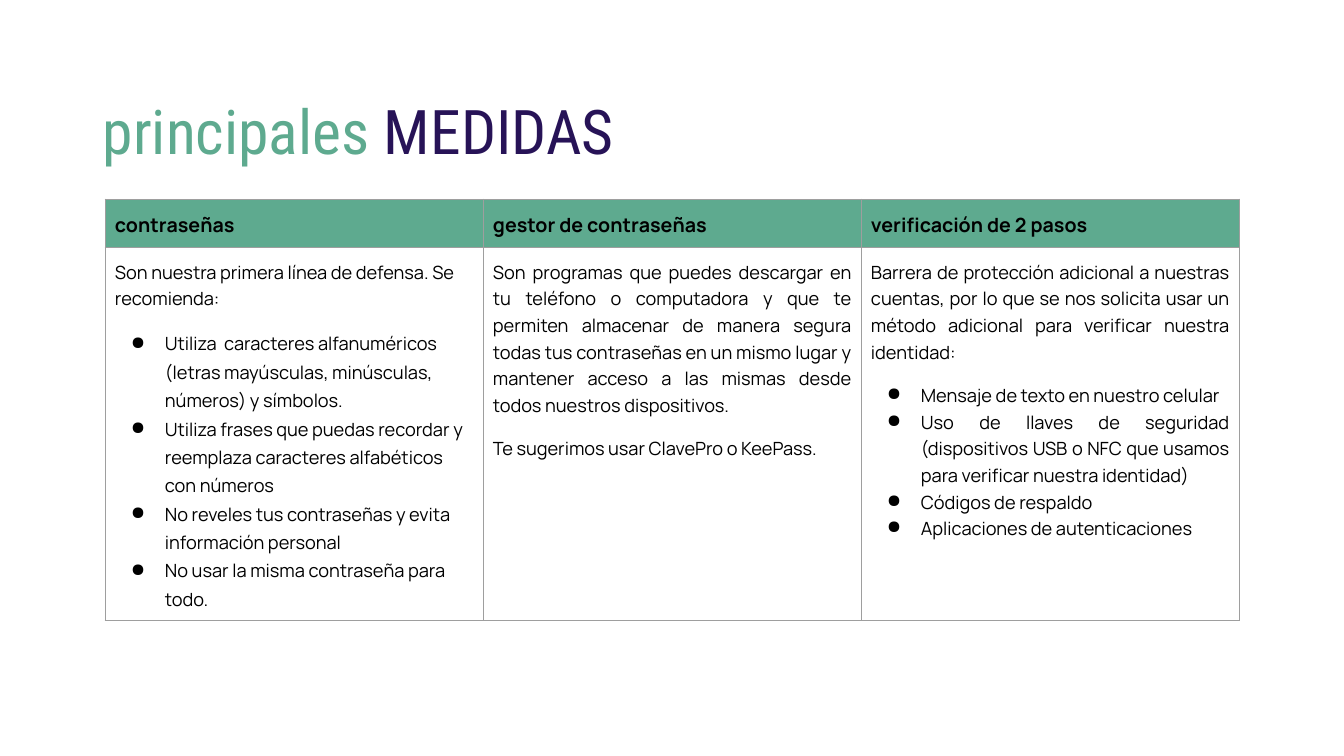
from lxml import etree
from pptx import Presentation
from pptx.dml.color import RGBColor
from pptx.enum.text import MSO_ANCHOR, PP_ALIGN
from pptx.oxml.ns import qn
from pptx.util import Emu, Pt

LEFT, JUSTIFY = PP_ALIGN.LEFT, PP_ALIGN.JUSTIFY
MIDDLE = MSO_ANCHOR.MIDDLE

GREEN, PURPLE, BLACK, GREY = "5EAA8F", "271357", "000000", "9E9E9E"
TITLE_FONT, TABLE_FONT = "Roboto Condensed", "Manrope"

TITLE = [("principales ", GREEN), ("MEDIDAS", PURPLE)]
MEASURES = [
    {
        "heading": "contraseñas",
        "align": LEFT,
        "bullet_spacing": 1.15,
        "texts": ["Son nuestra primera línea de defensa. Se recomienda:"],
        "bullets": [
            "Utiliza  caracteres alfanuméricos (letras mayúsculas, minúsculas, números) y símbolos.",
            "Utiliza frases que puedas recordar y reemplaza caracteres alfabéticos con números",
            "No reveles tus contraseñas y evita información personal",
            "No usar la misma contraseña para todo.",
        ],
    },
    {
        "heading": "gestor de contraseñas",
        "align": JUSTIFY,
        "bullet_spacing": 1.08,
        "texts": [
            "Son programas que puedes descargar en tu teléfono o computadora y que te "
            "permiten almacenar de manera segura todas tus contraseñas en un mismo lugar "
            "y mantener acceso a las mismas desde todos nuestros dispositivos.",
            "Te sugerimos usar ClavePro o KeePass.",
        ],
        "bullets": [],
    },
    {
        "heading": "verificación de 2 pasos",
        "align": JUSTIFY,
        "bullet_spacing": 1.08,
        "texts": [
            "Barrera de protección adicional a nuestras cuentas, por lo que se nos solicita "
            "usar un método adicional para verificar nuestra identidad:",
        ],
        "bullets": [
            "Mensaje de texto en nuestro celular",
            "Uso de llaves de seguridad (dispositivos USB o NFC que usamos para verificar "
            "nuestra identidad)",
            "Códigos de respaldo",
            "Aplicaciones de autenticaciones",
        ],
    },
]

SLIDE_SIZE = (1344, 756)
TITLE_BOX = (93, 62, 1159, 146)
TABLE_LEFT, TABLE_TOP, COLUMN_WIDTH = 105, 199, 378
ROW_HEIGHTS = (49, 373)
CELL_INSET, BULLET_INDENT, BULLET_HANG = 10, 50, 34


def px(length):
    return Emu(round(length * 914400 / 100.8))


def color(hex_string):
    return RGBColor.from_string(hex_string)


def add_run(paragraph, text, font, size, hex_string, bold=False):
    run = paragraph.add_run()
    run.text = text
    run.font.name = font
    run.font.size = Pt(size)
    run.font.bold = bold
    run.font.color.rgb = color(hex_string)


def add_bullet(paragraph):
    props = paragraph._p.get_or_add_pPr()
    props.set("marL", str(px(BULLET_INDENT)))
    props.set("indent", str(-px(BULLET_HANG)))
    bullet_color = etree.SubElement(props, qn("a:buClr"))
    etree.SubElement(bullet_color, qn("a:srgbClr"), val=BLACK)
    etree.SubElement(props, qn("a:buChar"), char="●")


def style_cell(cell, fill=None):
    """Set insets, fill and the four thin grey borders."""
    cell.margin_left = cell.margin_right = px(CELL_INSET)
    cell.margin_top = cell.margin_bottom = px(CELL_INSET)
    if fill:
        cell.fill.solid()
        cell.fill.fore_color.rgb = color(fill)
    else:
        cell.fill.background()
    props = cell._tc.get_or_add_tcPr()
    for position, side in enumerate(("lnL", "lnR", "lnT", "lnB")):
        border = etree.Element(qn(f"a:{side}"), w=str(Pt(0.75)))
        border_fill = etree.SubElement(border, qn("a:solidFill"))
        etree.SubElement(border_fill, qn("a:srgbClr"), val=GREY)
        props.insert(position, border)


def write_body(cell, measure):
    frame = cell.text_frame
    texts, bullets = measure["texts"], measure["bullets"]
    for index, text in enumerate(texts + bullets):
        paragraph = frame.add_paragraph() if index else frame.paragraphs[0]
        is_bullet = index >= len(texts)
        if is_bullet:
            add_bullet(paragraph)
        paragraph.alignment = measure["align"]
        paragraph.line_spacing = measure["bullet_spacing"] if is_bullet else 1.08
        if 0 < index <= len(texts):
            paragraph.space_before = Pt(12)
        add_run(paragraph, text, TABLE_FONT, 13, BLACK)


def add_title(slide):
    frame = slide.shapes.add_textbox(*map(px, TITLE_BOX)).text_frame
    frame.word_wrap = True
    frame.vertical_anchor = MIDDLE
    paragraph = frame.paragraphs[0]
    paragraph.line_spacing = 0.9
    for text, hex_string in TITLE:
        add_run(paragraph, text, TITLE_FONT, 44, hex_string)


def add_measures(slide):
    table = slide.shapes.add_table(
        len(ROW_HEIGHTS), len(MEASURES), px(TABLE_LEFT), px(TABLE_TOP),
        px(COLUMN_WIDTH * len(MEASURES)), px(sum(ROW_HEIGHTS)),
    ).table
    table.first_row = table.horz_banding = False
    for row, height in zip(table.rows, ROW_HEIGHTS):
        row.height = px(height)
    for column, measure in enumerate(MEASURES):
        table.columns[column].width = px(COLUMN_WIDTH)
        header, body = table.cell(0, column), table.cell(1, column)
        style_cell(header, GREEN)
        paragraph = header.text_frame.paragraphs[0]
        paragraph.line_spacing = 1.08
        add_run(paragraph, measure["heading"], TABLE_FONT, 14, BLACK, bold=True)
        style_cell(body)
        write_body(body, measure)


def main():
    deck = Presentation()
    deck.slide_width, deck.slide_height = map(px, SLIDE_SIZE)
    slide = deck.slides.add_slide(deck.slide_layouts[6])
    add_title(slide)
    add_measures(slide)
    deck.save("out.pptx")


if __name__ == "__main__":
    main()
